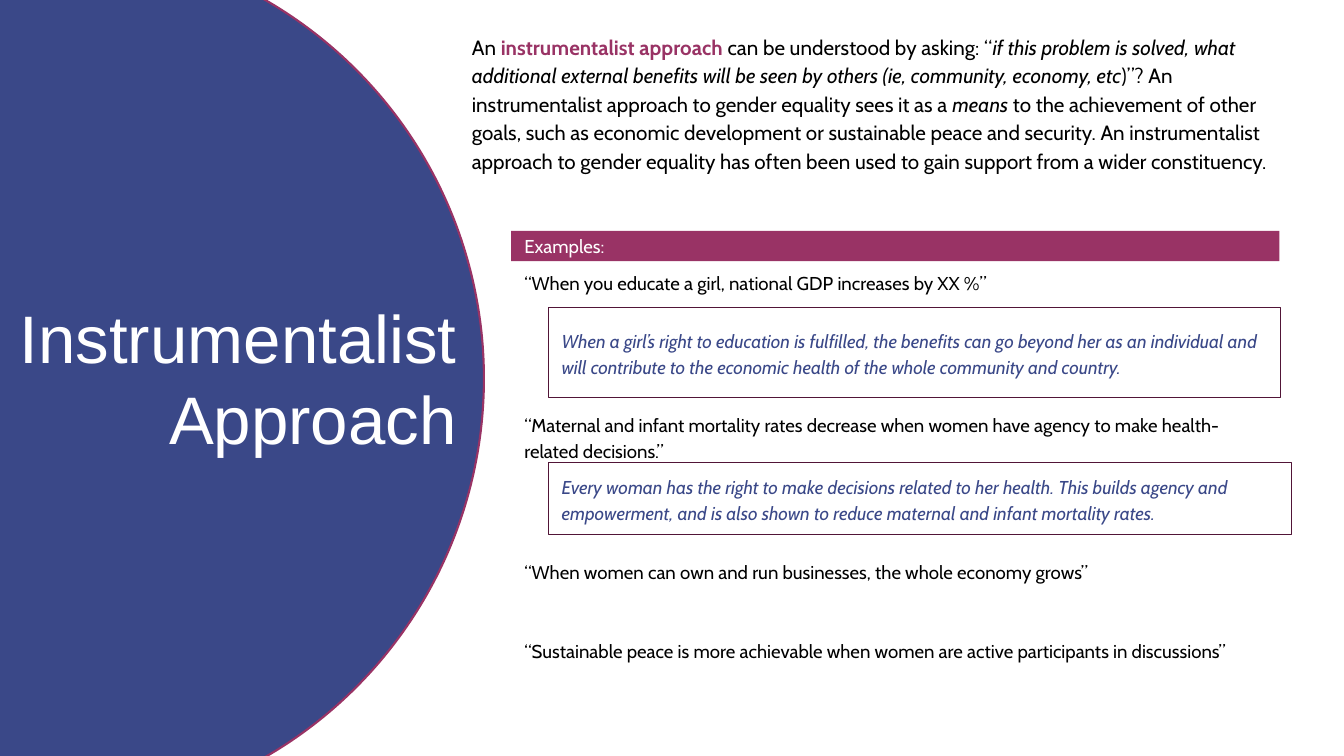
import pptx
import pptx.util
import pptx.dml.color
import pptx.enum.shapes
import pptx.enum.text

Inches = pptx.util.Inches
Pt = pptx.util.Pt
RGB = pptx.dml.color.RGBColor
SHAPE = pptx.enum.shapes.MSO_SHAPE
ANCHOR = pptx.enum.text.MSO_ANCHOR
ALIGN = pptx.enum.text.PP_ALIGN

BLUE = RGB(0x3A, 0x48, 0x88)
PLUM = RGB(0x99, 0x33, 0x65)
DARK = RGB(0x51, 0x15, 0x37)
BLACK = RGB(0, 0, 0)
WHITE = RGB(255, 255, 255)

BODY = 13.3
PAD = 0.13

INTRO = [
    ("An ", ""),
    ("instrumentalist approach ", "bold"),
    ("can be understood by asking: “", ""),
    ("if this problem is solved, what additional external benefits will be "
     "seen by others (ie, community, economy, etc", "italic"),
    (")”? An instrumentalist approach to gender equality sees it as a ", ""),
    ("means", "italic"),
    (" to the achievement of other goals, such as economic development or "
     "sustainable peace and security. An instrumentalist approach to gender "
     "equality has often been used to gain support from a wider "
     "constituency.", ""),
]

# Top, height and wording of each quote below the first
QUOTES = [
    (4.03, 0.6, "“Maternal and infant mortality rates decrease when women "
                "have agency to make health-related decisions.”"),
    (5.48, 0.36, "“When women can own and run businesses, the whole economy "
                 "grows”"),
    (6.04, 0.8, "“Sustainable peace is more achievable when women are active "
                "participants in discussions”"),
]

# Top, width, height and wording of each framed answer
ANSWERS = [
    (3.05, 7.26, 0.89, "When a girl’s right to education is fulfilled, the "
                       "benefits can go beyond her as an individual and will "
                       "contribute to the economic health of the whole "
                       "community and country."),
    (4.59, 7.37, 0.71, "Every woman has the right to make decisions related "
                       "to her health. This builds agency and empowerment, "
                       "and is also shown to reduce maternal and infant "
                       "mortality rates."),
]


def add_form(slide, kind, box, fill=None, line=None, width=0.75):
    form = slide.shapes.add_shape(kind, *map(Inches, box))
    form.shadow.inherit = False
    if fill is None:
        form.fill.background()
    else:
        form.fill.solid()
        form.fill.fore_color.rgb = fill
    if line is None:
        form.line.fill.background()
    else:
        form.line.color.rgb = line
        form.line.width = Pt(width)
    return form


def set_frame(form, anchor, align=ALIGN.LEFT, gap=None, lead=None):
    """Prepare the text frame of a form and return its first paragraph."""
    frame = form.text_frame
    frame.word_wrap = True
    frame.vertical_anchor = anchor
    frame.margin_left = frame.margin_right = Inches(PAD)
    frame.margin_top = frame.margin_bottom = Inches(PAD)
    para = frame.paragraphs[0]
    para.alignment = align
    if gap is not None:
        para.space_before = para.space_after = Pt(gap)
    if lead is not None:
        para.line_spacing = lead
    return para


def add_run(para, text, color, size=BODY, face="Cabin", bold=False,
            italic=False):
    run = para.add_run()
    run.text = text
    run.font.name = face
    run.font.size = Pt(size)
    run.font.bold = bold
    run.font.italic = italic
    run.font.color.rgb = color


def add_text(slide, box):
    return slide.shapes.add_textbox(*map(Inches, box))


def add_disc(slide, left, top, size):
    """Draw the large disc with the slide title over it."""
    add_form(slide, SHAPE.OVAL, (left, top, size, size), BLUE, PLUM, 1.5)
    title = add_text(slide, (left + 3.25, top + 3.39, 5.28, 1.88))
    para = set_frame(title, ANCHOR.TOP, ALIGN.RIGHT)
    add_run(para, "Instrumentalist Approach", WHITE, 48, "Arial")


def add_intro(slide, box):
    para = set_frame(add_text(slide, box), ANCHOR.TOP, gap=16, lead=1.15)
    for text, style in INTRO:
        add_run(para, text, PLUM if style == "bold" else BLACK, 14.7,
                bold=style == "bold", italic=style == "italic")


def add_cases(slide, left, top, width):
    """Place the heading bar, the quotes and the framed answers."""
    bar = add_form(slide, SHAPE.RECTANGLE, (left, top, width - 0.03, 0.3),
                   PLUM)
    add_run(set_frame(bar, ANCHOR.MIDDLE, gap=16), "Examples:", WHITE)

    first = add_text(slide, (left, top + 0.3, width, 0.6))
    add_run(set_frame(first, ANCHOR.TOP),
            "“When you educate a girl, national GDP increases by XX %”",
            BLACK)

    for y, high, text in QUOTES:
        quote = add_text(slide, (left, y, width, high))
        para = set_frame(quote, ANCHOR.MIDDLE, gap=16, lead=1.15)
        add_run(para, text, BLACK)

    for y, wide, high, text in ANSWERS:
        answer = add_form(slide, SHAPE.RECTANGLE,
                          (left + 0.37, y, wide, high), line=DARK)
        para = set_frame(answer, ANCHOR.MIDDLE, gap=16, lead=1.15)
        add_run(para, text, BLUE, italic=True)


def main():
    deck = pptx.Presentation()
    deck.slide_width = Inches(13.33)
    deck.slide_height = Inches(7.5)
    slide = deck.slides.add_slide(deck.slide_layouts[6])
    add_disc(slide, -3.87, -0.58, 8.67)
    add_intro(slide, (4.55, 0.18, 8.27, 2.29))
    add_cases(slide, 5.07, 2.29, 7.65)
    deck.save("out.pptx")


if __name__ == "__main__":
    main()
